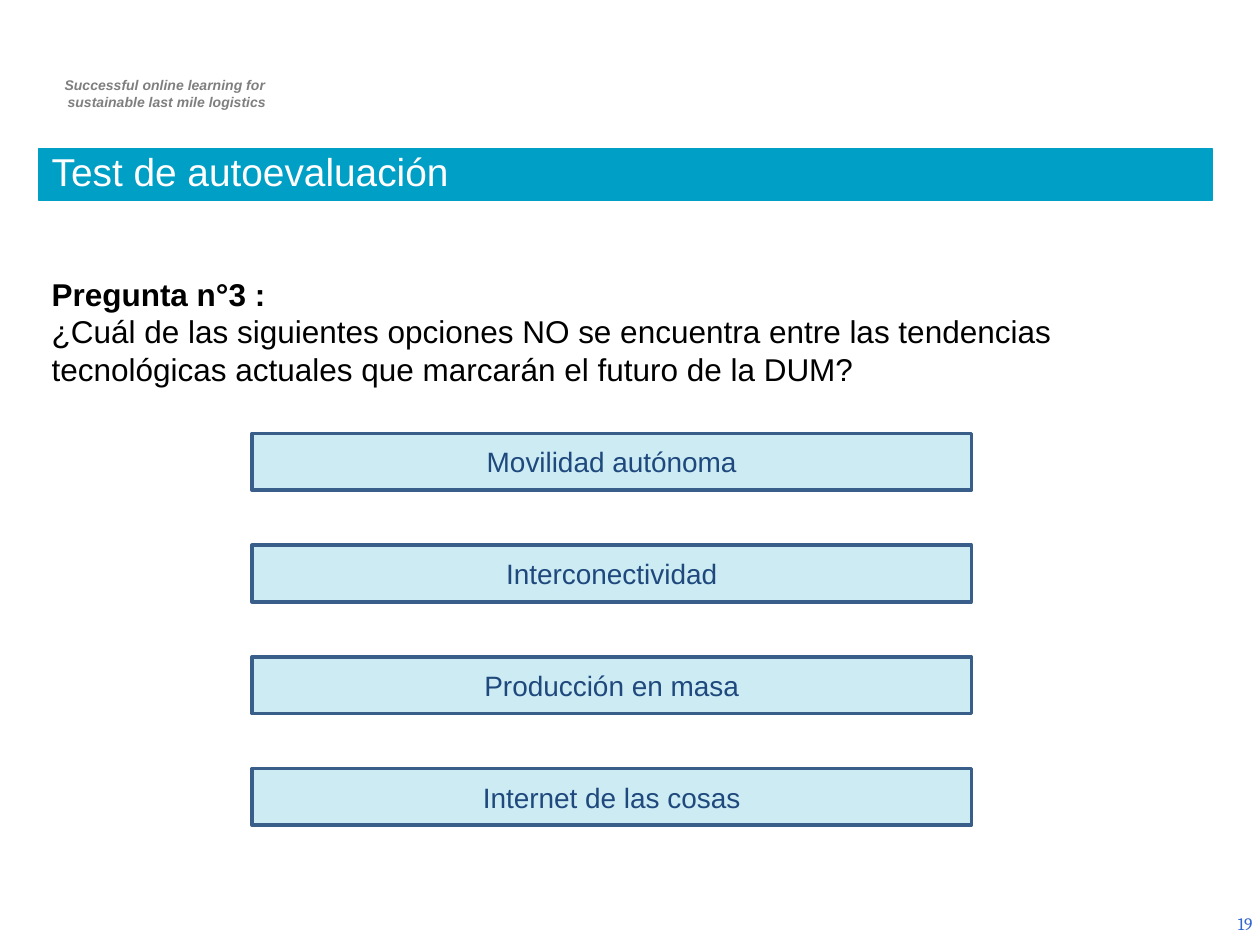
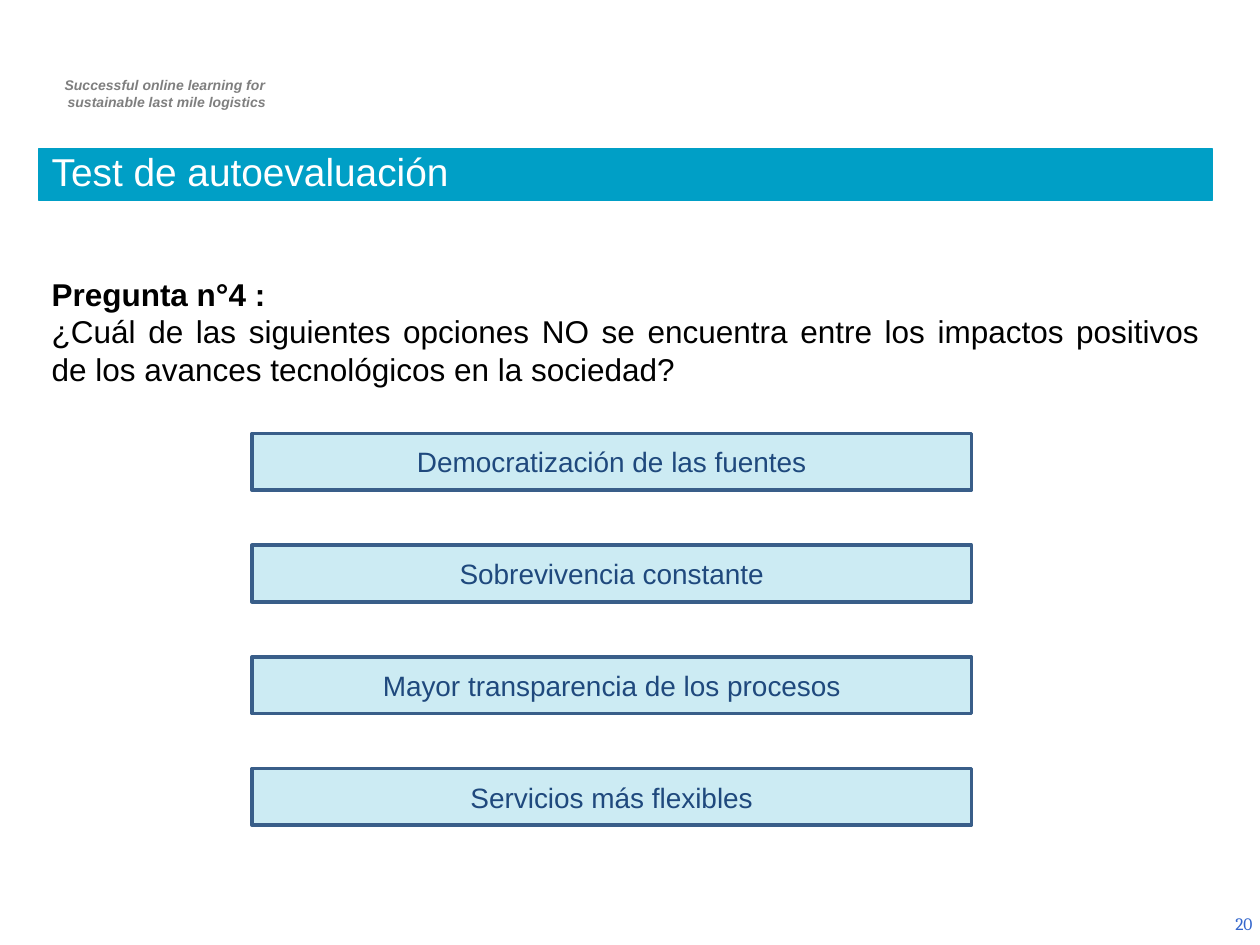
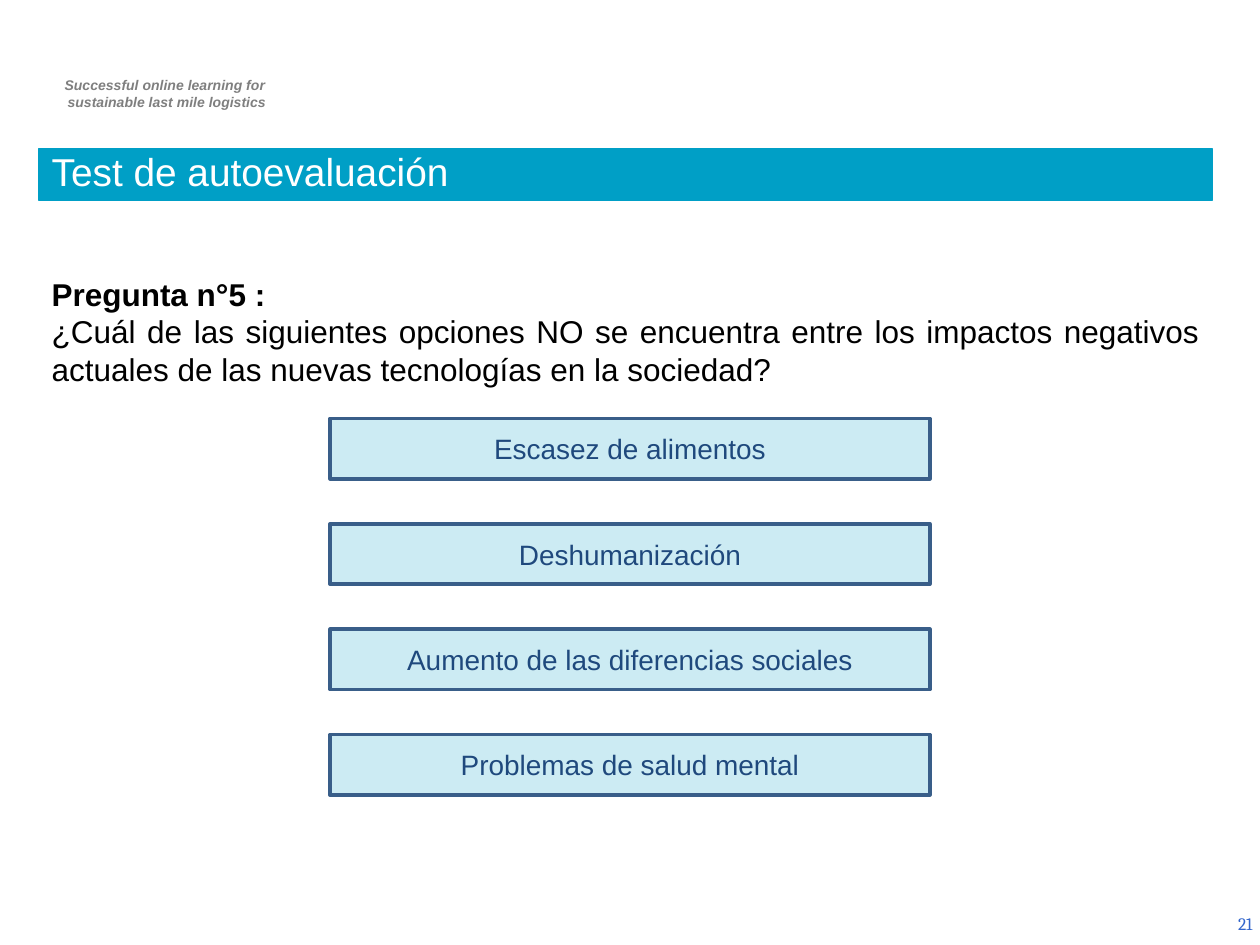
from pptx import Presentation
from pptx import util as u
from pptx.dml.color import RGBColor
from pptx.enum import shapes, text
from pptx.oxml import ns, xmlchemy

COLORS = {
    "band": "009FC6", "border": "395E89", "answer": "1F497D",
    "question": "000000", "tagline": "7F7F7F", "number": "3366CC",
    "title": "FFFFFF",
}
FORMATS = {
    "title": {"name": "Arial", "size": u.Pt(22.2)},
    "question": {"name": "Arial", "size": u.Pt(18)},
    "answer": {"name": "Arial", "size": u.Pt(16)},
    "tagline": {"name": "Arial", "size": u.Pt(8), "bold": True, "italic": True},
    "number": {"name": "Cambria", "size": u.Pt(10)},
}
ALIGN = text.PP_ALIGN
ANCHOR = text.MSO_ANCHOR

TITLE = "Test de autoevaluación"
TAGLINE = ["Successful online learning for ", "sustainable last mile logistics"]
FIRST_PAGE = 19

# Answer boxes: left, width, height, first top, last top
WIDE = (2, 5.71, 0.45, 3.44, 6.1)
NARROW = (2.62, 4.76, 0.48, 3.32, 5.83)

QUIZ = [
    (3, "¿Cuál de las siguientes opciones NO se encuentra entre las tendencias "
        "tecnológicas actuales que marcarán el futuro de la DUM?",
     ALIGN.LEFT, WIDE,
     ["Movilidad autónoma", "Interconectividad", "Producción en masa",
      "Internet de las cosas"]),
    (4, "¿Cuál de las siguientes opciones NO se encuentra entre los impactos "
        "positivos de los avances tecnológicos en la sociedad?",
     ALIGN.JUSTIFY, WIDE,
     ["Democratización de las fuentes", "Sobrevivencia constante",
      "Mayor transparencia de los procesos", "Servicios más flexibles"]),
    (5, "¿Cuál de las siguientes opciones NO se encuentra entre los impactos "
        "negativos actuales de las nuevas tecnologías en la sociedad?",
     ALIGN.JUSTIFY, NARROW,
     ["Escasez de alimentos", "Deshumanización",
      "Aumento de las diferencias sociales", "Problemas de salud mental"]),
]


def rgb(key):
    return RGBColor.from_string(COLORS[key])


class Deck:
    def __init__(self):
        self.prs = Presentation()
        self.prs.slide_width, self.prs.slide_height = u.Inches(10), u.Inches(7.5)
        self.s = None

    def new_slide(self):
        self.s = self.prs.slides.add_slide(self.prs.slide_layouts[1])

    def place(self, sp, left, top, width, height):
        box = {"left": left, "top": top, "width": width, "height": height}
        for side, value in box.items():
            setattr(sp, side, u.Inches(value))

    def set_lines(self, sp, lines, style, align, anchor=ANCHOR.TOP):
        tf = sp.text_frame
        tf.word_wrap, tf.auto_size = True, text.MSO_AUTO_SIZE.NONE
        tf.vertical_anchor = anchor
        for i, line in enumerate(lines):
            p = tf.add_paragraph() if i else tf.paragraphs[0]
            p.alignment, p.space_before = align, u.Pt(0)
            r = p.add_run()
            r.text = line
            for name, value in FORMATS[style].items():
                setattr(r.font, name, value)
            r.font.color.rgb = rgb(style)
        return tf.paragraphs

    def paint(self, sp, fill, line, width):
        sp.fill.solid()
        sp.fill.fore_color.rgb = rgb(fill)
        sp.line.color.rgb = rgb(line)
        sp.line.width = u.Pt(width)

    def label(self, box, lines, style, align, anchor=ANCHOR.TOP):
        sp = self.s.shapes.add_textbox(*map(u.Inches, box))
        return self.set_lines(sp, lines, style, align, anchor)

    def tagline(self):
        for p in self.label((0.29, 0.56, 2.03, 0.37), TAGLINE, "tagline", ALIGN.CENTER):
            p._p.get_or_add_pPr().set("marL", str(u.Inches(0.04)))

    def page_number(self, number):
        self.label((7.71, 7.13, 2.33, 0.4), [str(number)], "number",
                   ALIGN.RIGHT, ANCHOR.MIDDLE)

    def title(self, line):
        sp = self.s.shapes.title
        self.place(sp, 0.31, 1.18, 9.31, 0.41)
        self.paint(sp, "band", "band", 0.75)
        p, = self.set_lines(sp, [line], "title", ALIGN.LEFT, ANCHOR.BOTTOM)
        p.line_spacing = 0.8

    def question(self, number, line, align):
        sp = self.s.placeholders[1]
        self.place(sp, 0.31, 2.13, 9.31, 1.01)
        heading, body = self.set_lines(sp, [f"Pregunta n°{number} :", line],
                                       "question", ALIGN.LEFT)
        heading.runs[0].font.bold = True
        body.alignment = align
        # Plain paragraphs without bullets
        for p in (heading, body):
            pPr = p._p.get_or_add_pPr()
            pPr.set("marL", "0")
            pPr.set("indent", "0")
            pPr.append(xmlchemy.OxmlElement("a:buNone"))

    def answers(self, lines, grid):
        left, width, height, first, last = grid
        step = (last - first) / (len(lines) - 1)
        for i, line in enumerate(lines):
            box = (left, first + i * step, width, height)
            sp = self.s.shapes.add_shape(shapes.MSO_SHAPE.RECTANGLE,
                                         *map(u.Inches, box))
            sp.shadow.inherit = False
            self.paint(sp, "band", "border", 2)
            # Fill at 20 % opacity
            alpha = xmlchemy.OxmlElement("a:alpha")
            alpha.set("val", "20000")
            sp.element.spPr.find(ns.qn("a:solidFill"))[0].append(alpha)
            self.set_lines(sp, [line], "answer", ALIGN.CENTER, ANCHOR.MIDDLE)


def main():
    deck = Deck()
    for page, (number, line, align, grid, options) in enumerate(QUIZ, FIRST_PAGE):
        deck.new_slide()
        deck.tagline()
        deck.page_number(page)
        deck.title(TITLE)
        deck.question(number, line, align)
        deck.answers(options, grid)
    deck.prs.save("out.pptx")


if __name__ == "__main__":
    main()
